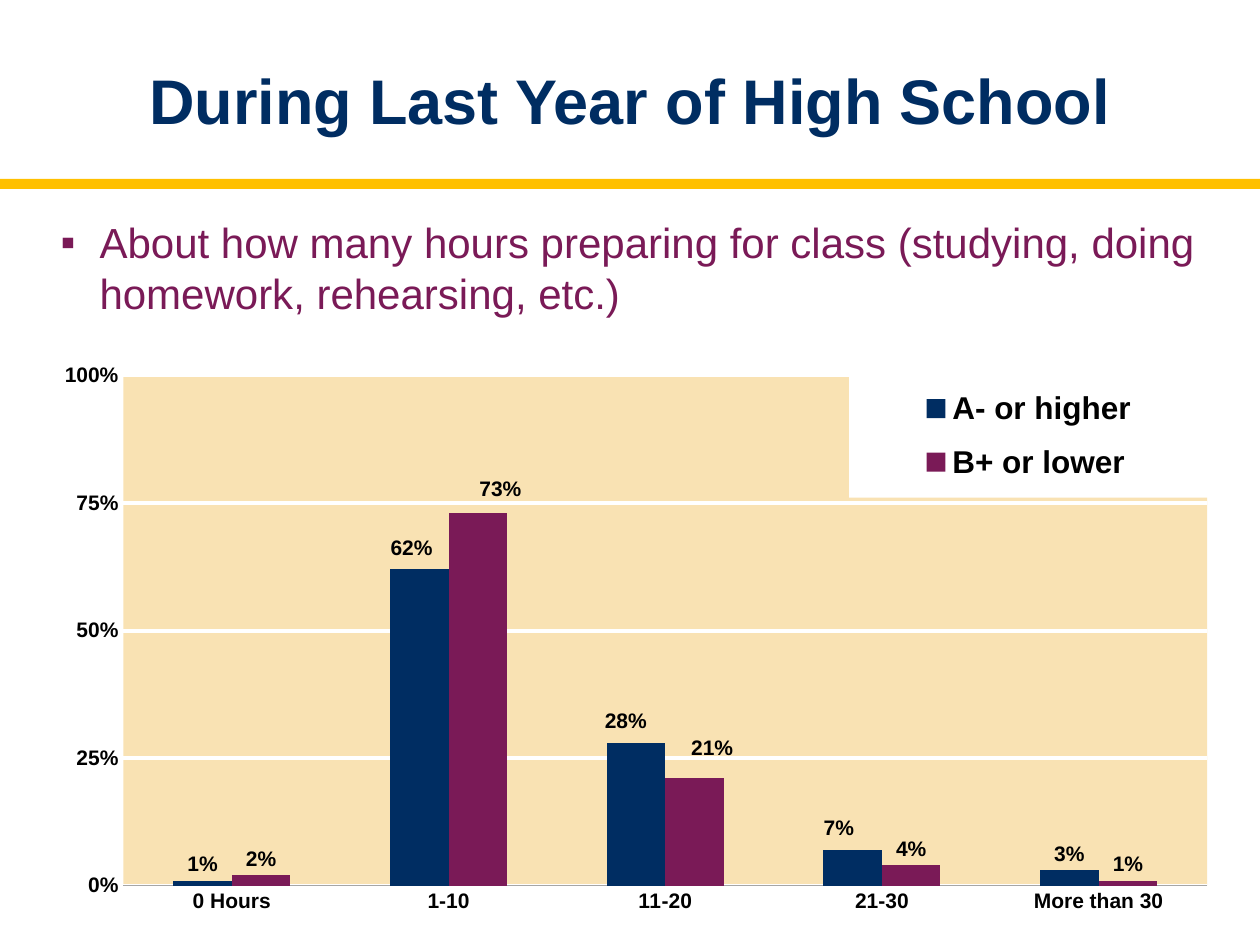
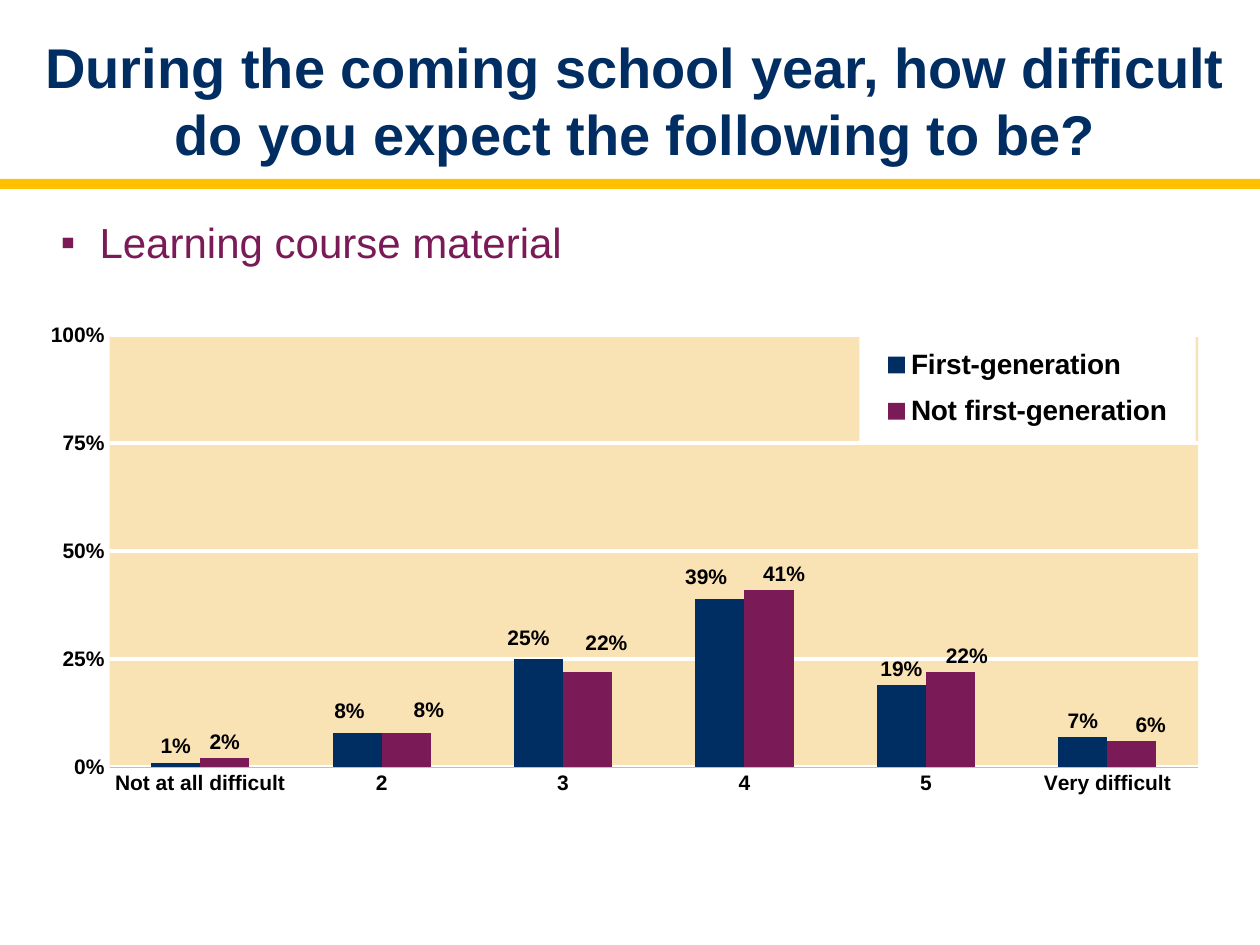
import pptx
import pptx.chart.data
import pptx.enum.chart
import pptx.enum.shapes
import pptx.enum.text
import pptx.oxml
import pptx.oxml.ns
import pptx.util
from pptx.dml.color import RGBColor
from pptx.util import Inches

NAVY = RGBColor(0x00, 0x2D, 0x62)
PLUM = RGBColor(0x7A, 0x1A, 0x57)
GOLD = RGBColor(0xFF, 0xC0, 0x00)
AMBER = RGBColor(0xEF, 0xAA, 0x22)
WHITE = RGBColor(0xFF, 0xFF, 0xFF)
BLACK = RGBColor(0x00, 0x00, 0x00)
GRAY = RGBColor(0xA6, 0xA6, 0xA6)
SILVER = RGBColor(0xBF, 0xBF, 0xBF)
FONT = "Arial"
LEGEND_POSITION = pptx.enum.chart.XL_LEGEND_POSITION

# Boxes are left, top, width, height in inches; plot and legend boxes start at the chart corner.
# Label shifts map a category index to a move right and down in inches.
SLIDES = [
    {
        "title": "During Last Year of High School",
        "title_box": (0.33, 0.25, 9.34, 1.08),
        "title_size": 36,
        "question": "About how many hours preparing for class (studying, doing homework, rehearsing, etc.)",
        "question_box": (0.25, 1.67, 9.42, 2.08),
        "chart_box": (0.25, 2.83, 9.42, 4.64),
        "plot_box": (0.73, 0.15, 8.6, 4.05),
        "legend_box": (6.49, 0.13, 2.85, 0.99),
        "legend_size": 18,
        "legend_position": LEGEND_POSITION.CORNER,
        "axis_line": (GRAY, 0.55),
        "categories": ["0 Hours", "1-10", "11-20", "21-30", "More than 30"],
        "series": [
            ("A- or higher", NAVY, (0.01, 0.62, 0.28, 0.07, 0.03),
             {1: (-0.06, -0.04), 2: (-0.08, -0.04), 3: (-0.11, -0.04)}),
            ("B+ or lower", PLUM, (0.02, 0.73, 0.21, 0.04, 0.01),
             {1: (0.18, -0.06), 2: (0.14, -0.11)}),
        ],
    },
    {
        "title": "During the coming school year, how difficult do you expect the following to be?",
        "title_box": (0.17, 0.25, 9.75, 1.08),
        "title_size": 32,
        "question": "Learning course material",
        "question_box": (0.25, 1.67, 9.42, 1),
        "chart_box": (0.25, 2.5, 9.42, 4.08),
        "plot_box": (0.62, 0.16, 8.64, 3.43),
        "legend_box": (6.57, 0.15, 2.67, 0.86),
        "legend_size": 16,
        "legend_position": LEGEND_POSITION.TOP,
        "axis_line": (SILVER, 0.61),
        "categories": ["Not at all difficult", "2", "3", "4", "5", "Very difficult"],
        "series": [
            ("First-generation", NAVY, (0.01, 0.08, 0.25, 0.39, 0.19, 0.07),
             {1: (-0.06, -0.04), 2: (-0.08, -0.04), 3: (-0.11, -0.04)}),
            ("Not first-generation", PLUM, (0.02, 0.08, 0.22, 0.41, 0.22, 0.06),
             {1: (0.18, -0.05), 2: (0.15, -0.1), 3: (0.12, 0),
              4: (0.13, 0), 5: (0.15, 0)}),
        ],
    },
]


def xml(tag, content="", attributes=""):
    namespaces = pptx.oxml.ns.nsdecls("c", "a")
    return pptx.oxml.parse_xml(f"<{tag} {namespaces} {attributes}>{content}</{tag}>")


def solid_fill(color, alpha=100):
    return xml("c:spPr", f'<a:solidFill><a:srgbClr val="{color}">'
               f'<a:alpha val="{alpha * 1000}"/></a:srgbClr></a:solidFill>')


def manual_layout(box, chart_box, edge=False, inner=False):
    chart_size = chart_box[2:] * 2
    content = '<c:layoutTarget val="inner"/>' if inner else ""
    if edge:
        content += '<c:xMode val="edge"/><c:yMode val="edge"/>'
    for name, length, whole in zip("xywh", box, chart_size):
        content += f'<c:{name} val="{length / whole:.4f}"/>'
    return xml("c:layout", f"<c:manualLayout>{content}</c:manualLayout>")


def format_font(font, size, color=BLACK, bold=True):
    font.name = FONT
    font.size = pptx.util.Pt(size)
    font.bold = bold
    font.color.rgb = color


def write_text(shape, text, box, anchor, alignment, **font_format):
    shape.left, shape.top, shape.width, shape.height = map(Inches, box)
    frame = shape.text_frame
    frame.auto_size = pptx.enum.text.MSO_AUTO_SIZE.NONE
    frame.word_wrap = True
    frame.vertical_anchor = anchor
    paragraph = frame.paragraphs[0]
    paragraph.alignment = alignment
    run = paragraph.add_run()
    run.text = text
    format_font(run.font, **font_format)
    return paragraph


def add_bullet(paragraph):
    properties = paragraph._p.get_or_add_pPr()
    properties.set("marL", str(Inches(0.44)))
    properties.set("indent", str(Inches(-0.31)))
    properties.append(xml("a:buClr", f'<a:srgbClr val="{PLUM}"/>'))
    properties.append(xml("a:buFont", attributes=f'typeface="{FONT}"'))
    properties.append(xml("a:buChar", attributes='char="▪"'))


def add_master_band(presentation, slide):
    band = slide.shapes.add_shape(pptx.enum.shapes.MSO_SHAPE.RECTANGLE,
                                  0, Inches(1.42), presentation.slide_width, Inches(0.08))
    band.shadow.inherit = False
    band.fill.solid()
    band.fill.fore_color.rgb = GOLD
    band.line.fill.background()
    band.element.nvSpPr.cNvPr.set("id", "20")
    presentation.slide_master.shapes.element.insert(2, band.element)


def format_axes(chart, line_color, line_width):
    for axis in (chart.category_axis, chart.value_axis):
        axis.major_tick_mark = axis.minor_tick_mark = pptx.enum.chart.XL_TICK_MARK.NONE
        format_font(axis.tick_labels.font, 12)
    chart.category_axis.format.line.color.rgb = line_color
    chart.category_axis.format.line.width = pptx.util.Pt(line_width)
    values = chart.value_axis
    values.minimum_scale, values.maximum_scale, values.major_unit = 0, 1, 0.25
    values.tick_labels.number_format = "0%"
    values.tick_labels.number_format_is_linked = False
    values.format.line.fill.background()
    values.major_gridlines.format.line.color.rgb = WHITE
    values.major_gridlines.format.line.width = pptx.util.Pt(2.25)


def format_series(series, color, shifts, chart_box):
    outside_end = pptx.enum.chart.XL_LABEL_POSITION.OUTSIDE_END
    series.format.fill.solid()
    series.format.fill.fore_color.rgb = color
    labels = series.data_labels
    labels.show_value = True
    labels.number_format = "0%"
    labels.number_format_is_linked = False
    labels.position = outside_end
    format_font(labels.font, 12)
    for index, shift in shifts.items():
        label = series.points[index].data_label
        format_font(label.font, 12)
        label.position = outside_end
        element = series._element.xpath(f"c:dLbls/c:dLbl[c:idx/@val='{index}']")[0]
        element.insert(1, manual_layout(shift, chart_box))
        element.insert(2, xml("c:numFmt", attributes='formatCode="0%" sourceLinked="0"'))
    for leader_lines in series._element.xpath("c:dLbls/c:showLeaderLines"):
        leader_lines.set("val", "0")


def format_plot_and_legend(chart, content):
    chart_box = content["chart_box"]
    chart.has_legend = True
    chart.legend.position = content["legend_position"]
    chart.legend.include_in_layout = True
    format_font(chart.legend.font, content["legend_size"])
    plot_area = chart.element.xpath("c:chart/c:plotArea")[0]
    legend = chart.element.xpath("c:chart/c:legend")[0]
    for parent in (plot_area, legend):
        for layout in parent.xpath("c:layout"):
            parent.remove(layout)
    plot_area.insert(0, manual_layout(content["plot_box"], chart_box, edge=True, inner=True))
    plot_area.append(solid_fill(AMBER, alpha=34))
    legend.xpath("c:legendPos")[0].addnext(
        manual_layout(content["legend_box"], chart_box, edge=True))
    legend.xpath("c:overlay")[0].addnext(solid_fill(WHITE))


def add_column_chart(slide, content):
    data = pptx.chart.data.CategoryChartData(number_format="0%")
    data.categories = content["categories"]
    for name, _, values, _ in content["series"]:
        data.add_series(name, values)
    chart = slide.shapes.add_chart(pptx.enum.chart.XL_CHART_TYPE.COLUMN_CLUSTERED,
                                   *map(Inches, content["chart_box"]), data).chart
    chart.has_title = False
    format_font(chart.font, 12)
    format_axes(chart, *content["axis_line"])
    plot = chart.plots[0]
    plot.gap_width = 170
    plot.overlap = 0
    plot.vary_by_categories = False
    for series, (_, color, _, shifts) in zip(plot.series, content["series"]):
        format_series(series, color, shifts, content["chart_box"])
    format_plot_and_legend(chart, content)


def add_survey_slide(presentation, content):
    slide = presentation.slides.add_slide(presentation.slide_layouts[1])
    anchors = pptx.enum.text.MSO_ANCHOR
    alignments = pptx.enum.text.PP_ALIGN
    write_text(slide.shapes.title, content["title"], content["title_box"],
               anchors.MIDDLE, alignments.CENTER, size=content["title_size"], color=NAVY)
    question = write_text(slide.placeholders[1], content["question"], content["question_box"],
                          anchors.TOP, alignments.LEFT, size=24, color=PLUM, bold=False)
    add_bullet(question)
    add_column_chart(slide, content)
    return slide


def main():
    presentation = pptx.Presentation()
    presentation.slide_width = Inches(10)
    presentation.slide_height = Inches(7.5)
    slides = [add_survey_slide(presentation, content) for content in SLIDES]
    add_master_band(presentation, slides[0])
    presentation.save("out.pptx")


if __name__ == "__main__":
    main()
